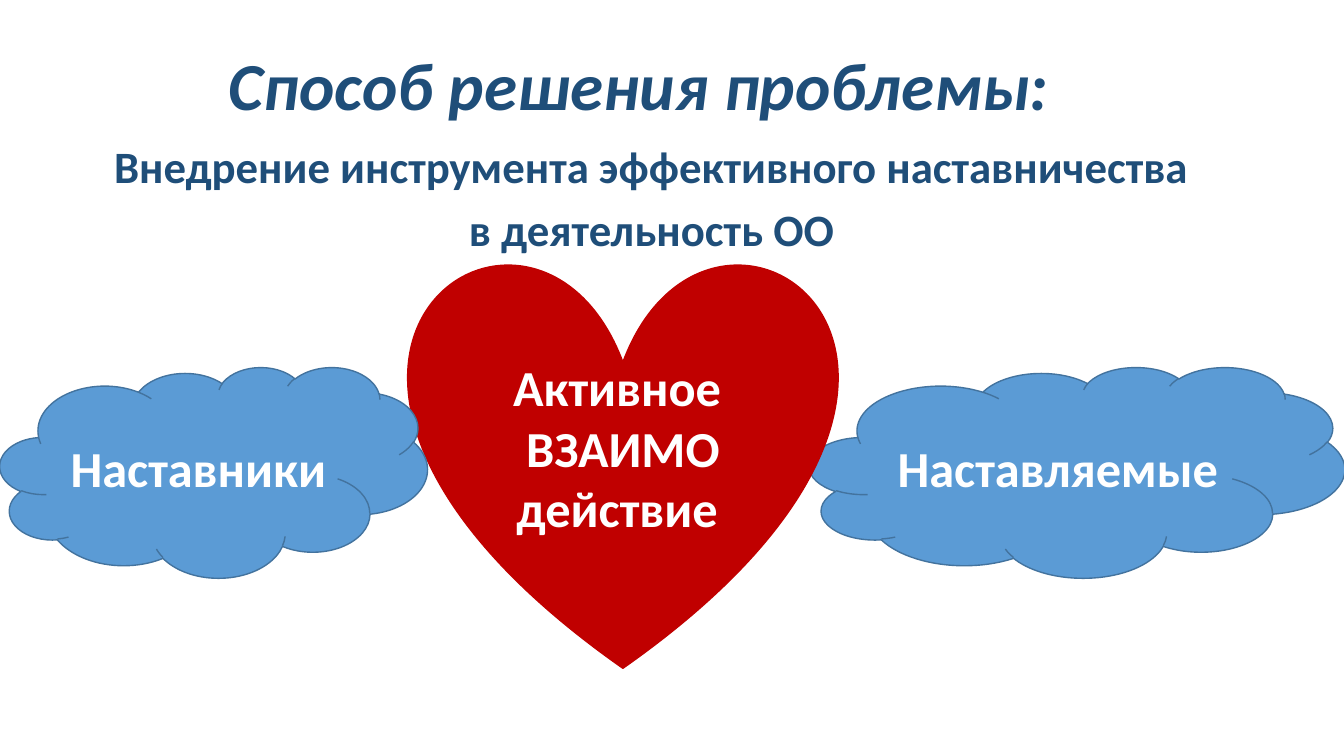
"""Build the slide on mentoring as the way to solve the problem."""
from dataclasses import dataclass

from pptx import Presentation
from pptx.dml.color import RGBColor
from pptx.enum.shapes import MSO_SHAPE
from pptx.enum.text import MSO_ANCHOR, PP_ALIGN
from pptx.slide import Slide
from pptx.text.text import TextFrame
from pptx.util import Pt

CLOUD, HEART = MSO_SHAPE.CLOUD, MSO_SHAPE.HEART
TOP, MIDDLE = MSO_ANCHOR.TOP, MSO_ANCHOR.MIDDLE
CENTER = PP_ALIGN.CENTER
FONT = "Calibri"
NAVY, WHITE = "1F4E79", "FFFFFF"
BLUE, BLUE_EDGE, RED = "5B9BD5", "43739E", "C00000"


@dataclass(frozen=True)
class Heading:
    left: float
    top: float
    width: float
    height: float
    lines: tuple[str, ...]
    size: float
    anchor: MSO_ANCHOR
    italic: bool = False
    space_before: float = 0
    right_inset: float = 7.2


@dataclass(frozen=True)
class Figure:
    kind: MSO_SHAPE
    left: float
    top: float
    width: float
    height: float
    fill: str
    edge: str
    lines: tuple[str, ...]


HEADINGS = (
    Heading(53.28, 11.52, 828, 104.4, ("Способ решения проблемы: ",), 48,
            MIDDLE, italic=True, right_inset=18),
    Heading(0, 100.08, 938.16, 46.8,
            ("Внедрение инструмента эффективного наставничества ",
             "в деятельность ОО "), 32, TOP, space_before=10),
)
FIGURES = (
    Figure(CLOUD, 578.16, 262.08, 382.32, 150.48, BLUE, BLUE_EDGE, ("Наставляемые ",)),
    Figure(HEART, 292.32, 185.76, 305.28, 291.6, RED, RED,
           ("Активное ", "ВЗАИМО", "действие ")),
    Figure(CLOUD, 0, 262.08, 305.28, 150.48, BLUE, BLUE_EDGE, ("Наставники ",)),
)


def color(value: str) -> RGBColor:
    """Turn a hex string into a colour."""
    return RGBColor.from_string(value)


def write_lines(frame: TextFrame, lines: tuple[str, ...], size: float, ink: str,
                italic: bool = False, spacing: float = 1, before: float = 0) -> None:
    """Write each line as a centred bold paragraph."""
    frame.word_wrap = True
    for index, line in enumerate(lines):
        para = frame.add_paragraph() if index else frame.paragraphs[0]
        para.alignment = CENTER
        para.line_spacing = spacing
        para.space_before = Pt(before)
        span = para.add_run()
        span.text = line
        span.font.name = FONT
        span.font.size = Pt(size)
        span.font.bold = True
        span.font.italic = italic
        span.font.color.rgb = color(ink)


def draw_heading(page: Slide, heading: Heading) -> None:
    """Place a heading in a text box."""
    box = page.shapes.add_textbox(Pt(heading.left), Pt(heading.top),
                                  Pt(heading.width), Pt(heading.height))
    frame = box.text_frame
    frame.vertical_anchor = heading.anchor
    frame.margin_right = Pt(heading.right_inset)
    write_lines(frame, heading.lines, heading.size, NAVY, heading.italic,
                0.9, heading.space_before)


def draw_figure(page: Slide, figure: Figure) -> None:
    """Place a filled shape with its label."""
    shape = page.shapes.add_shape(figure.kind, Pt(figure.left), Pt(figure.top),
                                  Pt(figure.width), Pt(figure.height))
    shape.shadow.inherit = False
    shape.fill.solid()
    shape.fill.fore_color.rgb = color(figure.fill)
    shape.line.color.rgb = color(figure.edge)
    shape.line.width = Pt(1)
    shape.text_frame.vertical_anchor = MIDDLE
    write_lines(shape.text_frame, figure.lines, 36, WHITE)


def main() -> None:
    """Create the deck and save it."""
    deck = Presentation()
    deck.slide_width, deck.slide_height = Pt(960), Pt(540)
    page = deck.slides.add_slide(deck.slide_layouts[6])
    for heading in HEADINGS:
        draw_heading(page, heading)
    for figure in FIGURES:
        draw_figure(page, figure)
    deck.save("out.pptx")


if __name__ == "__main__":
    main()
